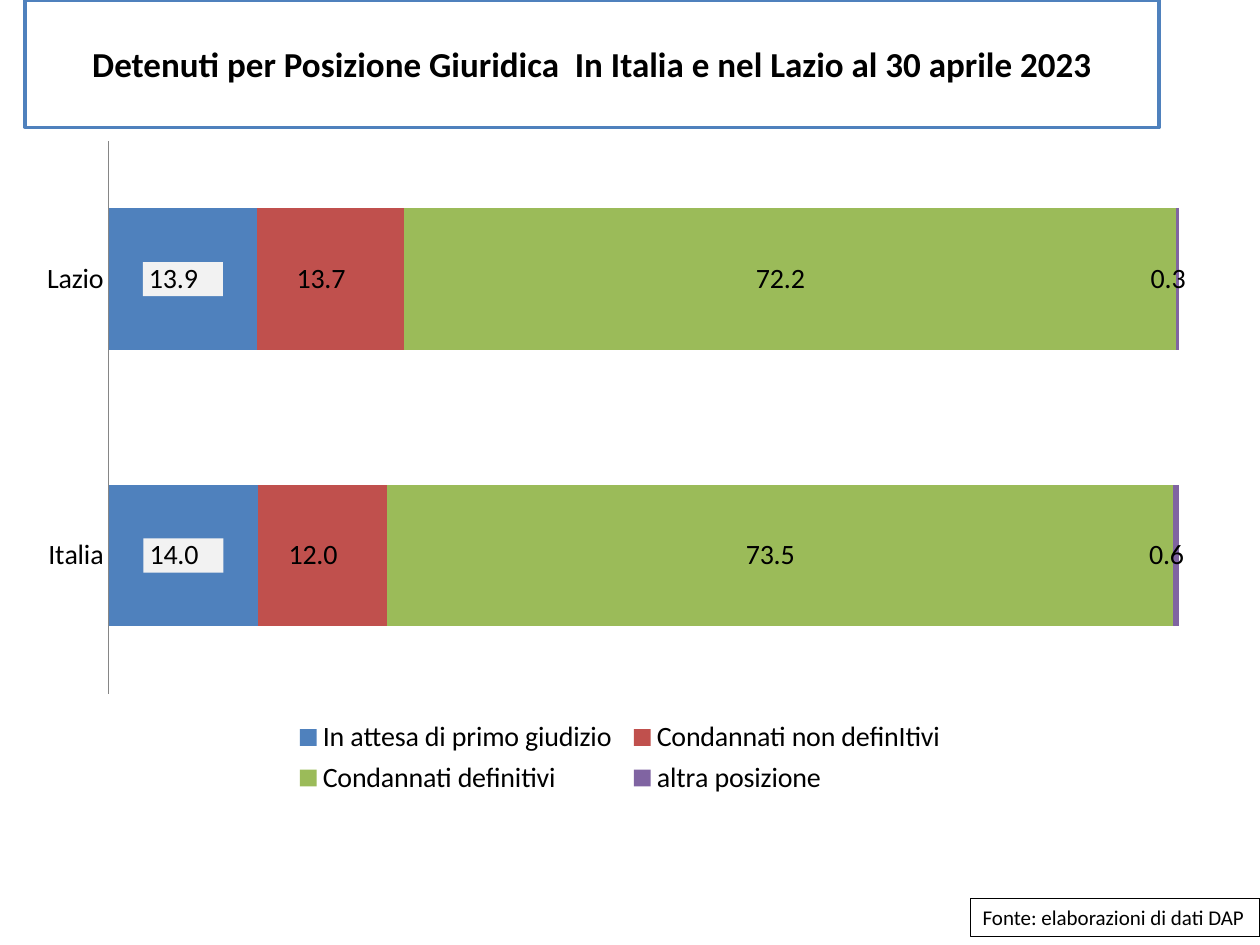
from lxml.etree import SubElement
from pptx import Presentation
from pptx.chart.data import CategoryChartData
from pptx.dml.color import RGBColor
from pptx.enum.chart import XL_CHART_TYPE, XL_LEGEND_POSITION, XL_TICK_LABEL_POSITION, XL_TICK_MARK
from pptx.enum.shapes import MSO_SHAPE
from pptx.enum.text import MSO_ANCHOR, PP_ALIGN
from pptx.oxml import parse_xml
from pptx.oxml.ns import nsdecls, qn
from pptx.util import Cm, Pt

BLACK = RGBColor(0x00, 0x00, 0x00)
WHITE = RGBColor(0xFF, 0xFF, 0xFF)
BLUE = RGBColor(0x4F, 0x81, 0xBD)
RED = RGBColor(0xC0, 0x50, 0x4D)
GREEN = RGBColor(0x9B, 0xBB, 0x59)
PURPLE = RGBColor(0x80, 0x64, 0xA2)
GREY = RGBColor(0x86, 0x86, 0x86)
LABEL_GREY = RGBColor(0xF2, 0xF2, 0xF2)
FONT = "Calibri"

TITLE = "Detenuti per Posizione Giuridica  In Italia e nel Lazio al 30 aprile 2023"
SOURCE = "Fonte: elaborazioni di dati DAP"
AREAS = ["Lazio", "Italia"]
POSITIONS = [
    ("In attesa di primo giudizio", (13.9, 14.0), BLUE),
    ("Condannati non definItivi", (13.7, 12.0), RED),
    ("Condannati definitivi", (72.2, 73.5), GREEN),
    ("altra posizione", (0.3, 0.6), PURPLE),
]
NUMBER_FORMAT = r"_-* #,##0.0\ _€_-;\-* #,##0.0\ _€_-;_-* "
PLOT_LAYOUT = {"x": 0.07, "y": 0.02, "w": 0.9, "h": 0.82}
LEGEND_LAYOUT = {"x": 0.22, "y": 0.87, "w": 0.56, "h": 0.13}


def style_font(font, size, bold=False):
    font.name = FONT
    font.size = Pt(size)
    font.bold = bold
    font.color.rgb = BLACK


def add_box(slide, text, frame, line_color, line_width, size, bold, align, wrap):
    box = slide.shapes.add_shape(MSO_SHAPE.RECTANGLE, *map(Cm, frame))
    box.shadow.inherit = False
    box.fill.solid()
    box.fill.fore_color.rgb = WHITE
    box.line.color.rgb = line_color
    box.line.width = Pt(line_width)
    box.text_frame.word_wrap = wrap
    box.text_frame.vertical_anchor = MSO_ANCHOR.MIDDLE
    paragraph = box.text_frame.paragraphs[0]
    paragraph.text = text
    paragraph.alignment = align
    style_font(paragraph.font, size, bold)


def set_layout(parent, after, fractions, inner=False):
    for old in parent.findall(qn("c:layout")):
        parent.remove(old)
    layout = parse_xml(f"<c:layout {nsdecls('c')}/>")
    manual = SubElement(layout, qn("c:manualLayout"))
    if inner:
        SubElement(manual, qn("c:layoutTarget"), val="inner")
    for axis in "xy":
        SubElement(manual, qn(f"c:{axis}Mode"), val="edge")
    for key, value in fractions.items():
        SubElement(manual, qn(f"c:{key}"), val=str(value))
    if after is None:
        parent.insert(0, layout)
    else:
        after.addnext(layout)


def add_label_fill(labels, color):
    fill = parse_xml(
        f'<c:spPr {nsdecls("c", "a")}><a:solidFill><a:srgbClr val="{color}"/></a:solidFill></c:spPr>'
    )
    labels.find(qn("c:numFmt")).addnext(fill)


def add_positions_chart(slide):
    data = CategoryChartData(number_format="0.0")
    data.categories = AREAS
    for name, values, _ in POSITIONS:
        data.add_series(name, values)
    chart = slide.shapes.add_chart(
        XL_CHART_TYPE.BAR_STACKED_100, Cm(0.51), Cm(2.57), Cm(23.98), Cm(13.59), data
    ).chart
    chart.has_title = False
    style_font(chart.font, 16)

    plot = chart.plots[0]
    plot.gap_width = 95
    plot.overlap = 100
    plot.vary_by_categories = False
    for series, (_, _, color) in zip(plot.series, POSITIONS):
        series.format.fill.solid()
        series.format.fill.fore_color.rgb = color
        labels = series.data_labels
        labels.show_value = True
        labels.number_format = NUMBER_FORMAT
        labels.number_format_is_linked = False
        style_font(labels.font, 16)
    add_label_fill(plot.series[0].data_labels._element, LABEL_GREY)

    areas = chart.category_axis
    areas.reverse_order = True
    areas.major_tick_mark = XL_TICK_MARK.NONE
    areas.tick_label_position = XL_TICK_LABEL_POSITION.NEXT_TO_AXIS
    areas.format.line.color.rgb = GREY
    areas.format.line.width = Pt(0.75)
    shares = chart.value_axis
    shares.has_major_gridlines = False
    shares.maximum_scale = 1
    shares.visible = False

    chart.has_legend = True
    legend = chart.legend
    legend.position = XL_LEGEND_POSITION.BOTTOM
    legend.include_in_layout = False
    style_font(legend.font, 16)
    set_layout(chart._chartSpace.chart.plotArea, None, PLOT_LAYOUT, inner=True)
    set_layout(legend._element, legend._element.find(qn("c:legendPos")), LEGEND_LAYOUT)


def main():
    deck = Presentation()
    deck.slide_width = Cm(25.4)
    deck.slide_height = Cm(19.05)
    slide = deck.slides.add_slide(deck.slide_layouts[6])
    add_box(slide, TITLE, (0.51, 0, 22.86, 2.57), BLUE, 2, 20, True, PP_ALIGN.CENTER, True)
    add_box(slide, SOURCE, (19.56, 18.11, 5.84, 0.77), BLACK, 0.75, 12, False, PP_ALIGN.LEFT, False)
    add_positions_chart(slide)
    deck.save("out.pptx")


if __name__ == "__main__":
    main()
